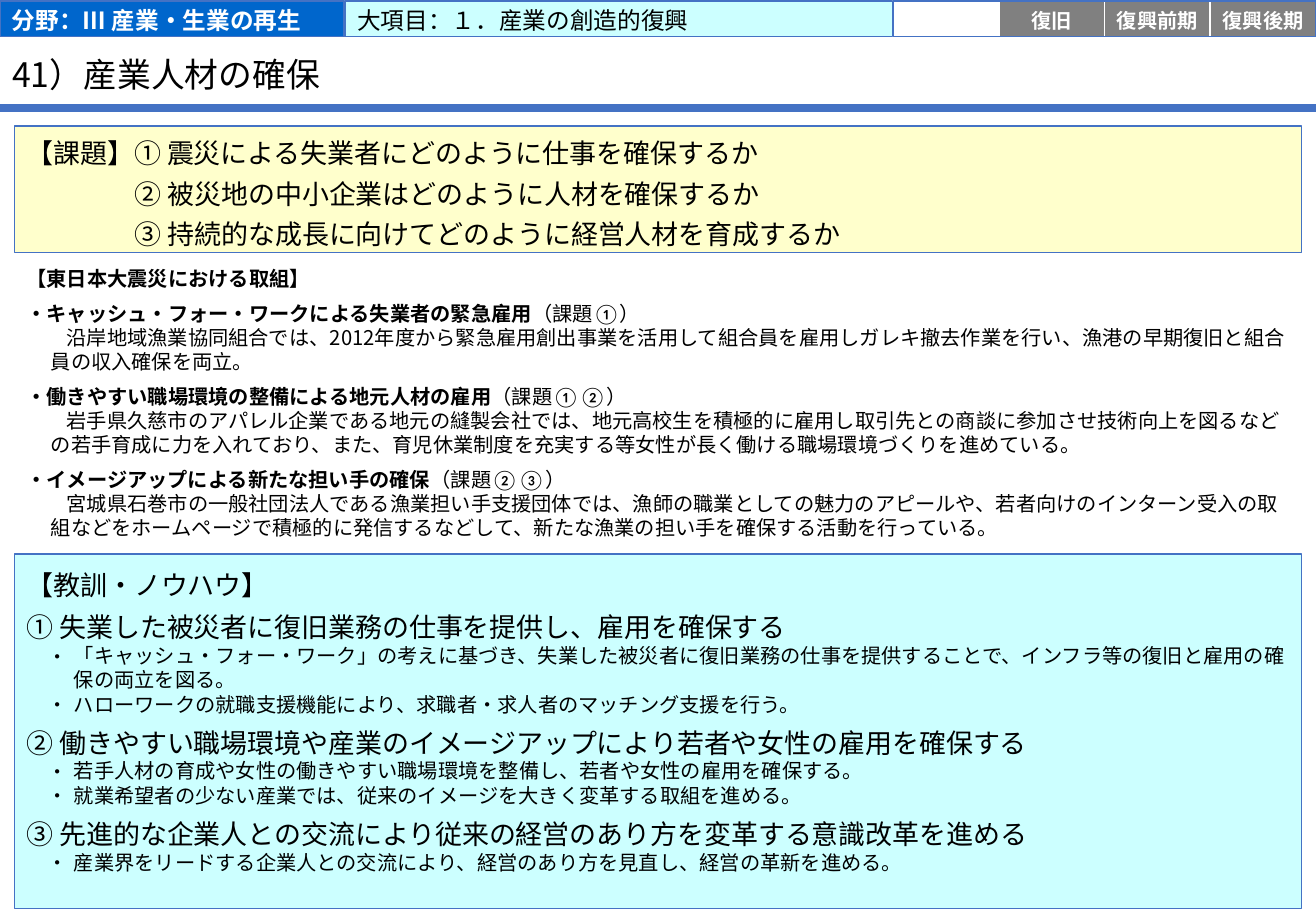
"""Build the slide on securing industrial human resources after the disaster."""
from dataclasses import dataclass

from lxml import etree
from pptx import Presentation
from pptx.dml.color import RGBColor
from pptx.enum.shapes import MSO_CONNECTOR, MSO_SHAPE
from pptx.enum.text import MSO_ANCHOR, MSO_AUTO_SIZE, PP_ALIGN
from pptx.oxml.ns import qn
from pptx.util import Inches, Pt

RECTANGLE = MSO_SHAPE.RECTANGLE
STRAIGHT = MSO_CONNECTOR.STRAIGHT
TOP, MIDDLE = MSO_ANCHOR.TOP, MSO_ANCHOR.MIDDLE
LEFT, CENTER = PP_ALIGN.LEFT, PP_ALIGN.CENTER
NO_FIT = MSO_AUTO_SIZE.NONE

TITLE = "41）産業人材の確保"
FIELD = "分野：Ⅲ 産業・生業の再生"
CATEGORY = "大項目：１．産業の創造的復興"
PHASES = ["", "復旧", "復興前期", "復興後期"]
ISSUES = [
    "【課題】① 震災による失業者にどのように仕事を確保するか",
    "② 被災地の中小企業はどのように人材を確保するか",
    "③ 持続的な成長に向けてどのように経営人材を育成するか",
]
EFFORTS_HEADING = "【東日本大震災における取組】"
EFFORTS = [
    ("・キャッシュ・フォー・ワークによる失業者の緊急雇用", "（課題①）",
     "沿岸地域漁業協同組合では、2012年度から緊急雇用創出事業を活用して組合員を雇用し"
     "ガレキ撤去作業を行い、漁港の早期復旧と組合員の収入確保を両立。"),
    ("・働きやすい職場環境の整備による地元人材の雇用", "（課題①②）",
     "岩手県久慈市のアパレル企業である地元の縫製会社では、地元高校生を積極的に雇用し"
     "取引先との商談に参加させ技術向上を図るなどの若手育成に力を入れており、また、"
     "育児休業制度を充実する等女性が長く働ける職場環境づくりを進めている。"),
    ("・イメージアップによる新たな担い手の確保", "（課題②③）",
     "宮城県石巻市の一般社団法人である漁業担い手支援団体では、漁師の職業としての魅力の"
     "アピールや、若者向けのインターン受入の取組などをホームページで積極的に発信するなどして、"
     "新たな漁業の担い手を確保する活動を行っている。"),
]
LESSONS_HEADING = "【教訓・ノウハウ】"
LESSONS = [
    ("① 失業した被災者に復旧業務の仕事を提供し、雇用を確保する", [
        "「キャッシュ・フォー・ワーク」の考えに基づき、失業した被災者に復旧業務の仕事を"
        "提供することで、インフラ等の復旧と雇用の確保の両立を図る。",
        "ハローワークの就職支援機能により、求職者・求人者のマッチング支援を行う。"]),
    ("② 働きやすい職場環境や産業のイメージアップにより若者や女性の雇用を確保する", [
        "若手人材の育成や女性の働きやすい職場環境を整備し、若者や女性の雇用を確保する。",
        "就業希望者の少ない産業では、従来のイメージを大きく変革する取組を進める。"]),
    ("③ 先進的な企業人との交流により従来の経営のあり方を変革する意識改革を進める", [
        "産業界をリードする企業人との交流により、経営のあり方を見直し、経営の革新を進める。"]),
]


@dataclass(frozen=True)
class Theme:
    """Colours, fonts and type sizes of the slide."""
    accent: str = "4472C4"
    field: str = "0066CC"
    cyan: str = "CCFFFF"
    yellow: str = "FFFFCC"
    grey: str = "808080"
    white: str = "FFFFFF"
    black: str = "000000"
    strong_font: str = "Calibri"
    body_font: str = "Noto Sans CJK JP"
    title_size: int = 20
    heading_size: int = 16
    band_size: int = 14
    body_size: int = 12


THEME = Theme()
SLIDE_WIDTH, SLIDE_HEIGHT = 10.83, 7.5
BOX_LEFT, BOX_WIDTH = 0.12, 10.59
BAND_TOP, BAND_HEIGHT = 0.01, 0.29
PHASE_LEFT, PHASE_WIDTH = 7.35, 0.87
BAND_INSETS = (0.1, 0.02, 0.1, 0)


def add_box(slide, left, top, width, height, fill=None, line=None):
    """Add a rectangle without shadow, with optional fill and outline."""
    shape = slide.shapes.add_shape(
        RECTANGLE, Inches(left), Inches(top), Inches(width), Inches(height))
    shape.shadow.inherit = False
    if fill:
        shape.fill.solid()
        shape.fill.fore_color.rgb = RGBColor.from_string(fill)
    else:
        shape.fill.background()
    if line:
        shape.line.color.rgb = RGBColor.from_string(line)
        shape.line.width = Pt(1)
    else:
        shape.line.fill.background()
    return shape


def set_frame(shape, anchor=MIDDLE, insets=(0.1, 0.05, 0.1, 0.05)):
    """Set anchor and insets of a shape and return its text frame."""
    frame = shape.text_frame
    frame.word_wrap = True
    frame.auto_size = NO_FIT
    frame.vertical_anchor = anchor
    frame.margin_left, frame.margin_top, frame.margin_right, frame.margin_bottom = map(Inches, insets)
    return frame


def add_text(frame, text, size=THEME.body_size, font=THEME.body_font, color=THEME.black,
             bold=False, align=LEFT, before=0, spacing=None, margin=0, indent=0,
             bullet=None, paragraph=None):
    """Write a run in a new paragraph, or append it to the given one."""
    if paragraph is None:
        first = frame.paragraphs[0]
        paragraph = frame.add_paragraph() if first.runs else first
        paragraph.alignment = align
        paragraph.space_before = Pt(before)
        if spacing:
            paragraph.line_spacing = spacing
        properties = paragraph._p.get_or_add_pPr()
        properties.set("marL", str(Inches(margin)))
        properties.set("indent", str(Inches(indent)))
        if bullet:
            etree.SubElement(properties, qn("a:buFont")).set("typeface", font)
            etree.SubElement(properties, qn("a:buChar")).set("char", bullet)
    run = paragraph.add_run()
    run.text = text
    run.font.size = Pt(size)
    run.font.name = font
    run.font.bold = bold
    run.font.color.rgb = RGBColor.from_string(color)
    etree.SubElement(run._r.get_or_add_rPr(), qn("a:ea")).set("typeface", font)
    return paragraph


def add_title(slide):
    """Place the title and the rule below it."""
    rule = slide.shapes.add_connector(STRAIGHT, 0, Inches(0.89), Inches(SLIDE_WIDTH), Inches(0.89))
    rule.line.color.rgb = RGBColor.from_string(THEME.accent)
    rule.line.width = Pt(4.5)
    etree.SubElement(rule._element.spPr, qn("a:effectLst"))
    title = slide.shapes.title
    title.left, title.top, title.width, title.height = map(Inches, (0, 0.32, 9.48, 0.58))
    add_text(set_frame(title, insets=(0.1, 0.04, 0.1, 0)), TITLE,
             size=THEME.title_size, spacing=0.9)


def add_band(slide):
    """Draw the field, category and phase cells along the top."""
    for text, left, width, fill, color, bold in (
            (FIELD, 0, 2.83, THEME.field, THEME.white, True),
            (CATEGORY, 2.84, 4.53, THEME.cyan, THEME.black, False)):
        cell = add_box(slide, left, BAND_TOP, width, BAND_HEIGHT, fill, THEME.accent)
        add_text(set_frame(cell, insets=BAND_INSETS), text, size=THEME.band_size,
                 font=THEME.strong_font, color=color, bold=bold)
    for index, phase in enumerate(PHASES):
        cell = add_box(slide, PHASE_LEFT + index * PHASE_WIDTH, BAND_TOP, PHASE_WIDTH,
                       BAND_HEIGHT, THEME.grey if phase else THEME.white, THEME.white)
        if phase:
            add_text(set_frame(cell, insets=(0, 0.02, 0, 0)), phase, font=THEME.strong_font,
                     color=THEME.white, bold=True, align=CENTER)
    add_box(slide, PHASE_LEFT, BAND_TOP, PHASE_WIDTH * len(PHASES), BAND_HEIGHT, line=THEME.accent)


def add_sections(slide):
    """Fill the efforts, issues and lessons boxes."""
    efforts = set_frame(add_box(slide, BOX_LEFT, 2.21, BOX_WIDTH, 2.22, THEME.white))
    add_text(efforts, EFFORTS_HEADING, font=THEME.strong_font, bold=True)
    for heading, issue, detail in EFFORTS:
        paragraph = add_text(efforts, heading, font=THEME.strong_font, bold=True, before=6)
        add_text(efforts, issue, font=THEME.strong_font, paragraph=paragraph)
        add_text(efforts, detail, margin=0.2, indent=0.13)

    issues = set_frame(add_box(slide, BOX_LEFT, 1.04, BOX_WIDTH, 1.04, THEME.yellow, THEME.accent),
                       insets=(0.1, 0.12, 0.1, 0.12))
    for index, issue in enumerate(ISSUES):
        add_text(issues, issue, size=THEME.heading_size, spacing=Pt(24),
                 margin=0.89 if index else 0)

    lessons = set_frame(add_box(slide, BOX_LEFT, 4.56, BOX_WIDTH, 2.92, THEME.cyan, THEME.accent),
                        anchor=TOP, insets=(0.1, 0.12, 0.1, 0))
    add_text(lessons, LESSONS_HEADING, size=THEME.heading_size)
    for heading, points in LESSONS:
        add_text(lessons, heading, size=THEME.heading_size, before=6)
        for point in points:
            add_text(lessons, point, margin=0.39, indent=-0.22, bullet="・")


def main():
    """Build and save the presentation."""
    presentation = Presentation()
    presentation.slide_width, presentation.slide_height = Inches(SLIDE_WIDTH), Inches(SLIDE_HEIGHT)
    slide = presentation.slides.add_slide(presentation.slide_layouts.get_by_name("Title Only"))
    add_title(slide)
    add_band(slide)
    add_sections(slide)
    presentation.save("out.pptx")


if __name__ == "__main__":
    main()
